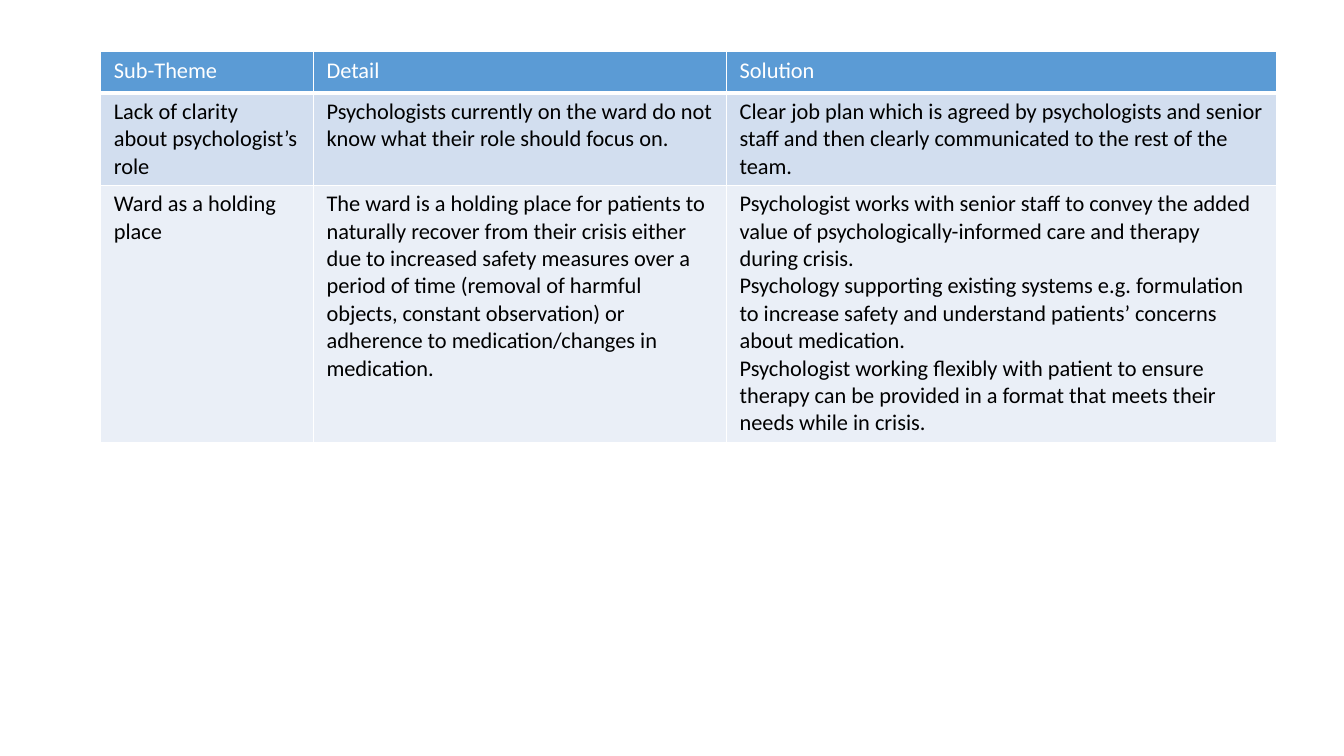
import dataclasses

import pptx
import pptx.dml.color
import pptx.oxml.ns
import pptx.util
from lxml import etree

Cm = pptx.util.Cm
Pt = pptx.util.Pt


@dataclasses.dataclass(frozen=True)
class Theme:
    font: str = "Calibri"
    text_size: int = 16
    header_fill: str = "5B9BD5"
    header_text: str = "FFFFFF"
    body_fills: tuple = ("D2DEEF", "EAEFF7")
    body_text: str = "000000"
    border: str = "FFFFFF"
    border_width: int = 1
    header_rule_width: int = 3


THEME = Theme()

COLUMN_WIDTHS = (5.36, 10.41, 13.86)
ROW_HEIGHTS = (1.04, 2.06, 5.69)

# Each cell is a list of paragraphs
ROWS = [
    [["Sub-Theme"], ["Detail"], ["Solution"]],
    [
        ["Lack of clarity", "about psychologist’s role"],
        ["Psychologists currently on the ward do not know what their role should focus on."],
        ["Clear job plan which is agreed by psychologists and senior staff and then "
         "clearly communicated to the rest of the team."],
    ],
    [
        ["Ward as a holding place"],
        ["The ward is a holding place for patients to naturally recover from their crisis "
         "either due to increased safety measures over a period of time (removal of harmful "
         "objects, constant observation) or adherence to medication/changes in medication."],
        ["Psychologist works with senior staff to convey the added value of "
         "psychologically-informed care and therapy during crisis.",
         "Psychology supporting existing systems e.g. formulation to increase safety and "
         "understand patients’ concerns about medication.",
         "Psychologist working flexibly with patient to ensure therapy can be provided in "
         "a format that meets their needs while in crisis."],
    ],
]


def rgb(value):
    return pptx.dml.color.RGBColor.from_string(value)


def set_borders(cell, bottom_width):
    """Border lines must come before the fill in the cell properties."""
    qn = pptx.oxml.ns.qn
    properties = cell._tc.get_or_add_tcPr()
    widths = {"lnL": THEME.border_width, "lnR": THEME.border_width,
              "lnT": THEME.border_width, "lnB": bottom_width}
    for index, (side, width) in enumerate(widths.items()):
        line = etree.Element(qn(f"a:{side}"), w=str(Pt(width)))
        fill = etree.SubElement(line, qn("a:solidFill"))
        etree.SubElement(fill, qn("a:srgbClr"), val=THEME.border)
        properties.insert(index, line)


def fill_cell(cell, paragraphs, fill, text_color, bottom_width):
    cell.fill.solid()
    cell.fill.fore_color.rgb = rgb(fill)
    cell.margin_left = cell.margin_right = Cm(0.33)
    cell.margin_top = cell.margin_bottom = Cm(0.13)
    set_borders(cell, bottom_width)
    frame = cell.text_frame
    for index, text in enumerate(paragraphs):
        paragraph = frame.add_paragraph() if index else frame.paragraphs[0]
        run = paragraph.add_run()
        run.text = text
        run.font.name = THEME.font
        run.font.size = Pt(THEME.text_size)
        run.font.bold = False
        run.font.color.rgb = rgb(text_color)


def add_theme_table(slide, left, top, width, height):
    """Place the table in the box, sharing its size out in proportion."""
    shape = slide.shapes.add_table(len(ROWS), len(COLUMN_WIDTHS), left, top, width, height)
    table = shape.table
    table.first_row = table.horz_banding = False
    for column, share in zip(table.columns, COLUMN_WIDTHS):
        column.width = int(width * share / sum(COLUMN_WIDTHS))
    for row, share in zip(table.rows, ROW_HEIGHTS):
        row.height = int(height * share / sum(ROW_HEIGHTS))

    for row_index, contents in enumerate(ROWS):
        if row_index == 0:
            style = (THEME.header_fill, THEME.header_text, THEME.header_rule_width)
        else:
            band = THEME.body_fills[(row_index - 1) % len(THEME.body_fills)]
            style = (band, THEME.body_text, THEME.border_width)
        for column_index, paragraphs in enumerate(contents):
            fill_cell(table.cell(row_index, column_index), paragraphs, *style)


def main():
    presentation = pptx.Presentation()
    presentation.slide_width = Cm(33.87)
    presentation.slide_height = Cm(19.05)
    slide = presentation.slides.add_slide(presentation.slide_layouts[6])

    # Sub-themes with their solutions
    add_theme_table(slide, Cm(2.54), Cm(1.3),
                    Cm(sum(COLUMN_WIDTHS)), Cm(sum(ROW_HEIGHTS)))

    presentation.save("out.pptx")


if __name__ == "__main__":
    main()
